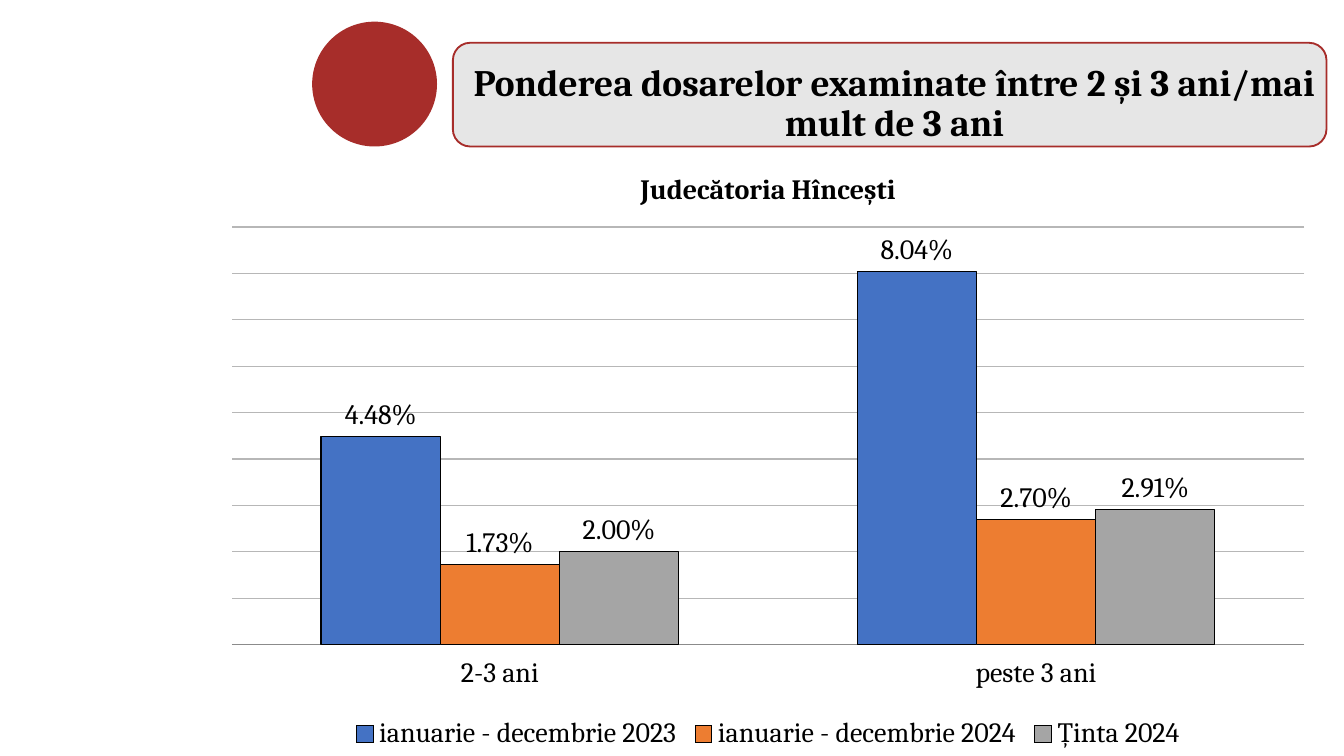
from pptx import Presentation
from pptx.chart.data import CategoryChartData
from pptx.dml.color import RGBColor
from pptx.enum.chart import (XL_CHART_TYPE, XL_LABEL_POSITION,
                             XL_LEGEND_POSITION, XL_TICK_LABEL_POSITION,
                             XL_TICK_MARK)
from pptx.enum.shapes import MSO_SHAPE
from pptx.enum.text import PP_ALIGN
from pptx.util import Cm, Pt

RED = RGBColor(0xA7, 0x2D, 0x2A)
PALE = RGBColor(0xE6, 0xE6, 0xE6)
BLACK = RGBColor(0, 0, 0)
GRID = RGBColor(0xB7, 0xB7, 0xB7)
AXIS = RGBColor(0x8B, 0x8B, 0x8B)
BLUE = RGBColor(0x44, 0x72, 0xC4)
ORANGE = RGBColor(0xED, 0x7D, 0x31)
GRAY = RGBColor(0xA5, 0xA5, 0xA5)

FACE = "Cambria"
PERCENT = "0.00%"
GROUPS = ["2-3 ani", "peste 3 ani"]
SERIES = [
    ("ianuarie - decembrie 2023", (0.0448, 0.0804), BLUE),
    ("ianuarie - decembrie 2024", (0.0173, 0.027), ORANGE),
    ("Ținta 2024", (0.02, 0.0291), GRAY),
]


def set_font(font, size, bold=False):
    font.name = FACE
    font.size = Pt(size)
    font.bold = bold
    font.color.rgb = BLACK


def set_line(line, color, width):
    line.color.rgb = color
    line.width = Pt(width)


def add_shape(slide, kind, box, fill, edge=None):
    shape = slide.shapes.add_shape(kind, *map(Cm, box))
    shape.shadow.inherit = False
    shape.fill.solid()
    shape.fill.fore_color.rgb = fill
    if edge is None:
        shape.line.fill.background()
    else:
        set_line(shape.line, edge, 1)


def add_title(slide, text, box):
    frame = slide.shapes.add_textbox(*map(Cm, box)).text_frame
    frame.word_wrap = True
    frame.text = text
    para = frame.paragraphs[0]
    para.alignment = PP_ALIGN.CENTER
    para.line_spacing = 0.9
    set_font(para.runs[0].font, 20, True)


def style_axes(chart):
    groups = chart.category_axis
    groups.major_tick_mark = XL_TICK_MARK.NONE
    groups.tick_label_position = XL_TICK_LABEL_POSITION.LOW
    set_line(groups.format.line, AXIS, 0.75)
    values = chart.value_axis
    values.visible = False
    values.minimum_scale = 0
    values.maximum_scale = 0.09
    values.major_unit = 0.01
    values.has_major_gridlines = True
    set_line(values.major_gridlines.format.line, GRID, 0.75)
    values.tick_labels.number_format = PERCENT
    values.tick_labels.number_format_is_linked = False


def style_bars(plot):
    plot.gap_width = 150
    plot.overlap = 0
    plot.vary_by_categories = False
    for bars, (_, _, color) in zip(plot.series, SERIES):
        bars.format.fill.solid()
        bars.format.fill.fore_color.rgb = color
        set_line(bars.format.line, BLACK, 0.75)
        labels = bars.data_labels
        labels.show_value = True
        labels.number_format = PERCENT
        labels.number_format_is_linked = False
        labels.position = XL_LABEL_POSITION.OUTSIDE_END
        set_font(labels.font, 15)


def add_chart(slide, title, box):
    data = CategoryChartData(number_format=PERCENT)
    data.categories = GROUPS
    for name, values, _ in SERIES:
        data.add_series(name, values)
    chart = slide.shapes.add_chart(
        XL_CHART_TYPE.COLUMN_CLUSTERED, *map(Cm, box), data).chart
    set_font(chart.font, 15)
    chart.has_title = True
    frame = chart.chart_title.text_frame
    frame.text = title
    set_font(frame.paragraphs[0].runs[0].font, 15, True)
    chart.chart_title.include_in_layout = False
    chart.has_legend = True
    chart.legend.position = XL_LEGEND_POSITION.BOTTOM
    chart.legend.include_in_layout = False
    style_axes(chart)
    style_bars(chart.plots[0])


def main():
    deck = Presentation()
    deck.slide_width = Cm(25.4)
    deck.slide_height = Cm(14.29)
    slide = deck.slides.add_slide(deck.slide_layouts[6])
    add_shape(slide, MSO_SHAPE.OVAL, (5.9, 0.41, 2.36, 2.36), RED)
    add_shape(slide, MSO_SHAPE.ROUNDED_RECTANGLE, (8.56, 0.81, 16.51, 1.96),
              PALE, RED)
    add_title(slide, "Ponderea dosarelor examinate între 2 și 3 ani/mai mult "
              "de 3 ani", (8.41, 1.09, 16.99, 1.8))
    add_chart(slide, "Judecătoria Hîncești", (3.96, 2.77, 21.11, 11.51))
    deck.save("out.pptx")


if __name__ == "__main__":
    main()
